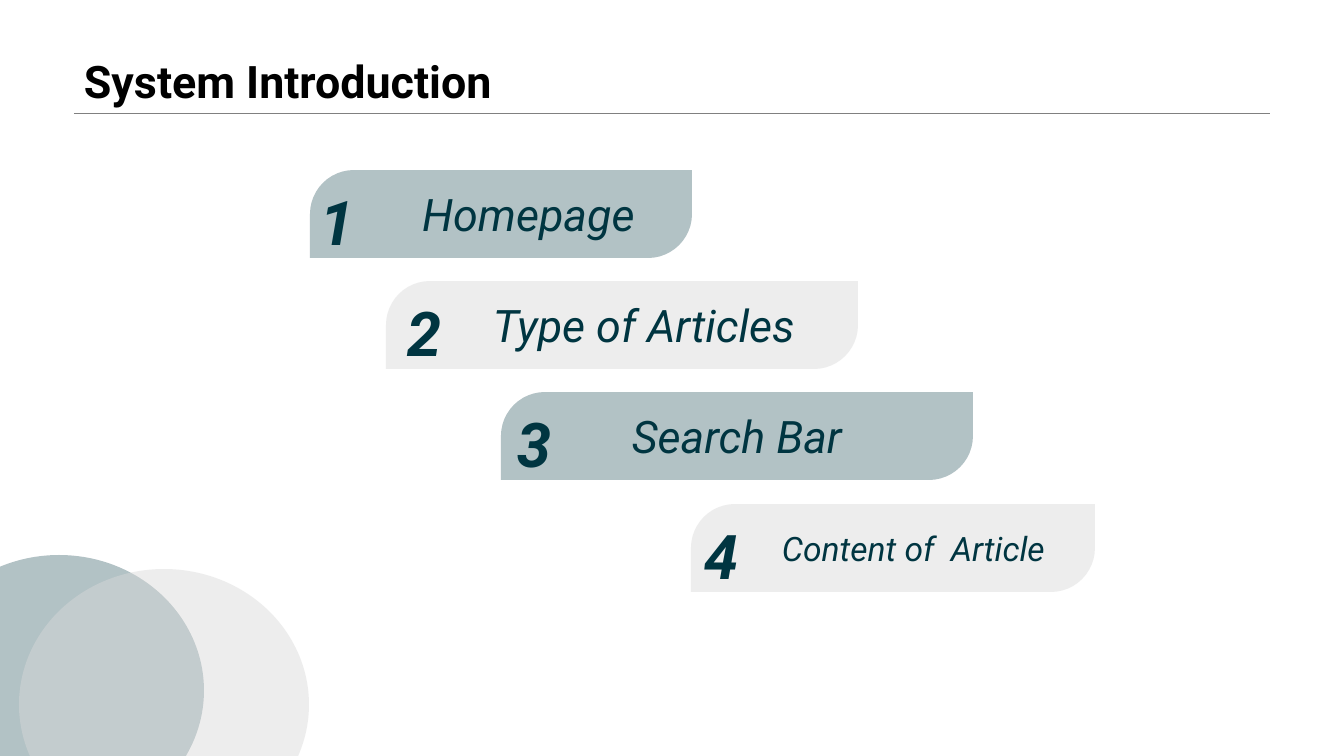
from lxml import etree
from pptx import Presentation
from pptx.dml.color import RGBColor
from pptx.enum.shapes import MSO_CONNECTOR, MSO_SHAPE as Kind
from pptx.enum.text import MSO_ANCHOR as Anchor, PP_ALIGN as Align
from pptx.oxml.ns import qn
from pptx.util import Pt

PX = 12192000 / 1344
TEAL, GREY = ("003541", 30), ("D9D9D9", 45)
INK = "003541"


def place(*box):
    return [round(n * PX) for n in box]


def write(frame, text, size, color, bold=False, italic=False):
    """Fill the frame's first paragraph and return it."""
    para = frame.paragraphs[0]
    para.text = text
    font = para.font
    font.name, font.size = "Roboto", Pt(size)
    font.bold, font.italic = bold, italic
    font.color.rgb = RGBColor.from_string(color)
    return para


deck = Presentation()
deck.slide_width, deck.slide_height = place(1344, 756)
slide = deck.slides.add_slide(deck.slide_layouts[6])
shapes = slide.shapes

# Heading and rule
rule = shapes.add_connector(MSO_CONNECTOR.STRAIGHT, *place(74, 113, 1270, 113))
rule.line.color.rgb = RGBColor.from_string("808080")
rule.line.width = Pt(0.25)
etree.SubElement(rule.element.spPr, qn("a:effectLst"))

title = shapes.add_textbox(*place(74, 0, 1196, 113)).text_frame
title.word_wrap = True
title.vertical_anchor = Anchor.BOTTOM
write(title, "System Introduction", 32, "000000", bold=True).line_spacing = 0.9

# Panels: kind, box, tint, label, text size, extra left inset
panels = [
    (Kind.FLOWCHART_CONNECTOR, (-86, 555, 290, 271), TEAL, "", 0, 0),
    (Kind.FLOWCHART_CONNECTOR, (19, 569, 290, 271), GREY, "", 0, 0),
]
bars = [
    (310, 382, TEAL, "Homepage", 32, 55),
    (386, 472, GREY, "Type of Articles", 32, 44),
    (501, 472, TEAL, "Search Bar", 32, 0),
    (691, 404, GREY, "Content of  Article", 24, 41),
]
tops = [170 + 334 * i // 3 for i in range(len(bars))]
for top, (left, width, *rest) in zip(tops, bars):
    panels.append((Kind.ROUND_2_DIAG_RECTANGLE, (left, top, width, 88), *rest))

for kind, box, (color, alpha), label, size, inset in panels:
    panel = shapes.add_shape(kind, *place(*box))
    panel.shadow.inherit = False
    panel.line.fill.background()
    panel.fill.solid()
    panel.fill.fore_color.rgb = RGBColor.from_string(color)
    tint = panel.element.spPr.find(".//" + qn("a:srgbClr"))
    etree.SubElement(tint, qn("a:alpha"), val=str(alpha * 1000))
    if label:
        panel.adjustments[0] = 0.5
        frame = panel.text_frame
        frame.word_wrap = True
        frame.vertical_anchor = Anchor.MIDDLE
        frame.margin_left = place(10 + inset)[0]
        write(frame, label, size, INK, italic=True).alignment = Align.CENTER

# Bar numbers
spots = [(310, 48), (397, 59), (507, 59), (694, 59)]
for num, (top, (left, width)) in enumerate(zip(tops, spots), 1):
    frame = shapes.add_textbox(*place(left, top + 9, width, 85)).text_frame
    frame.word_wrap = False
    write(frame, str(num), 44, INK, bold=True, italic=True)

deck.save("out.pptx")
